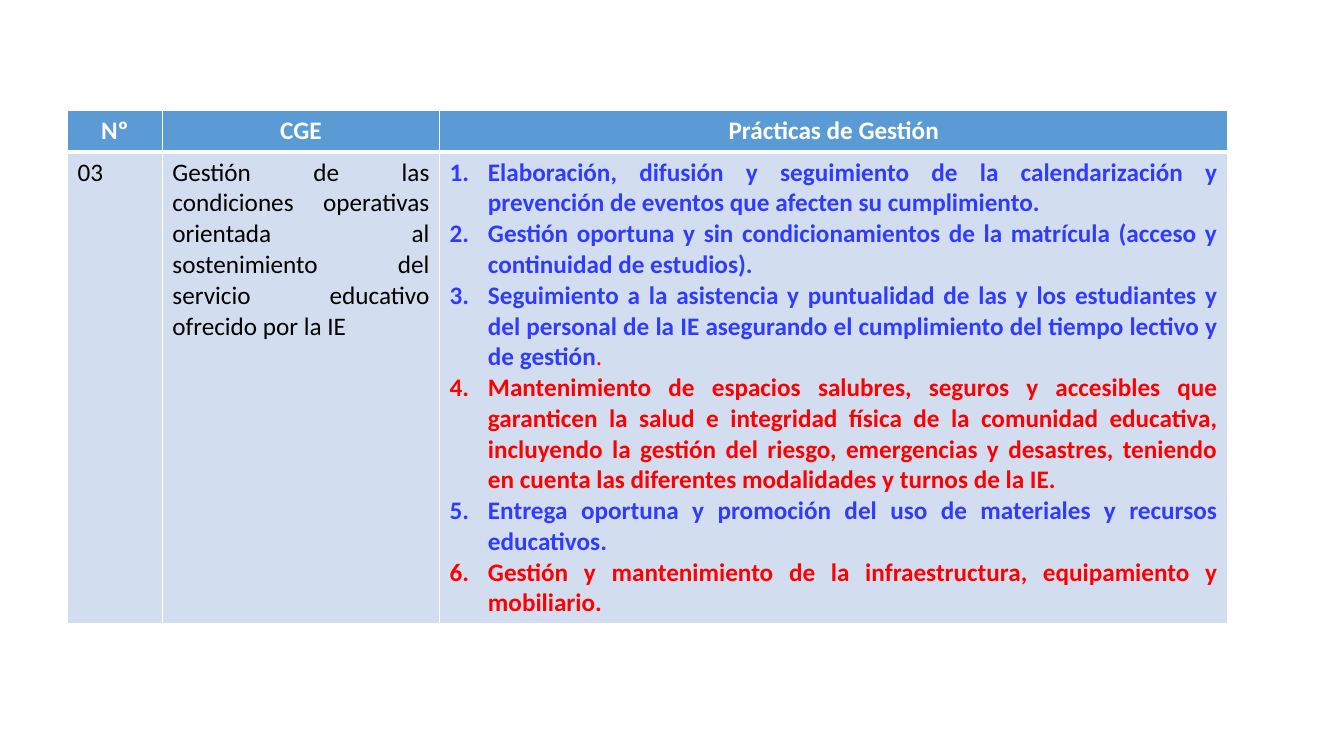
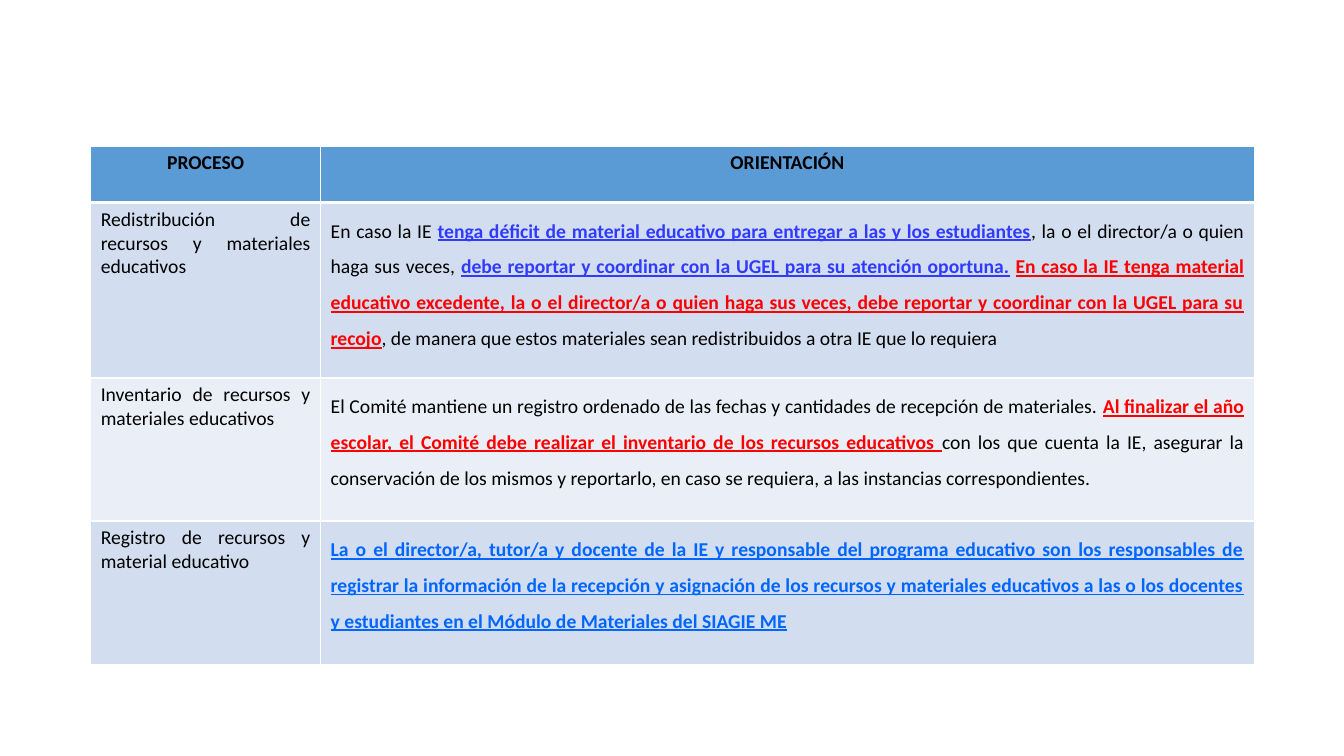
from dataclasses import dataclass

from lxml.etree import SubElement
from pptx import Presentation
from pptx.dml.color import RGBColor
from pptx.enum.text import PP_ALIGN
from pptx.oxml.ns import qn
from pptx.util import Inches, Pt

FONT = "Calibri"
BLACK, WHITE, BLUE, RED, AZURE = "000000", "FFFFFF", "313BFF", "FF0000", "0066FF"
HEAD, BANDS = "5B9BD5", ("D2DEEF", "EAEFF7")
CENTER, LEFT, JUST = PP_ALIGN.CENTER, PP_ALIGN.LEFT, PP_ALIGN.JUSTIFY


@dataclass(frozen=True)
class Run:
    text: str
    color: str = BLACK
    bold: bool = False
    under: bool = False


@dataclass(frozen=True)
class Para:
    runs: tuple[Run, ...]
    align: PP_ALIGN = JUST
    space: float = 1.0
    number: bool = False


@dataclass(frozen=True)
class Grid:
    left: float
    top: float
    cols: tuple[float, ...]
    rows: tuple[float, ...]
    size: int
    cells: tuple[tuple[tuple[Para, ...], ...], ...]


def paint(color: str) -> RGBColor:
    return RGBColor.from_string(color)


def border(cell, side: str, width: float) -> None:
    line = SubElement(cell._tc.get_or_add_tcPr(), qn(f"a:{side}"), w=str(Pt(width)))
    fill = SubElement(line, qn("a:solidFill"))
    SubElement(fill, qn("a:srgbClr"), val=WHITE)


def write(par, data: Para, size: int) -> None:
    if data.number:
        props = par._p.get_or_add_pPr()
        props.set("marL", str(Inches(0.38)))
        props.set("indent", str(Inches(-0.38)))
        SubElement(props, qn("a:buFont"), typeface="+mj-lt")
        SubElement(props, qn("a:buAutoNum"), type="arabicPeriod")
    par.alignment = data.align
    par.line_spacing = data.space
    for item in data.runs:
        run = par.add_run()
        run.text = item.text
        font = run.font
        font.name, font.size = FONT, Pt(size)
        font.bold, font.underline = item.bold, item.under
        font.color.rgb = paint(item.color)


def style(cell, row: int) -> None:
    for side in ("lnL", "lnR"):
        border(cell, side, 1)
    border(cell, "lnT", 3 if row == 1 else 1)
    border(cell, "lnB", 3 if row == 0 else 1)
    cell.fill.solid()
    cell.fill.fore_color.rgb = paint(BANDS[(row - 1) % 2] if row else HEAD)


def draw(deck, grid: Grid) -> None:
    slide = deck.slides.add_slide(deck.slide_layouts[6])
    table = slide.shapes.add_table(
        len(grid.rows), len(grid.cols), Inches(grid.left), Inches(grid.top),
        Inches(sum(grid.cols)), Inches(sum(grid.rows)),
    ).table
    for col, width in zip(table.columns, grid.cols):
        col.width = Inches(width)
    for row, height in zip(table.rows, grid.rows):
        row.height = Inches(height)
    for r, line in enumerate(grid.cells):
        for c, paras in enumerate(line):
            cell = table.cell(r, c)
            style(cell, r)
            frame = cell.text_frame
            for n, para in enumerate(paras):
                write(frame.add_paragraph() if n else frame.paragraphs[0], para, grid.size)


def head(color: str, *names: str) -> tuple[tuple[Para, ...], ...]:
    return tuple((Para((Run(name, color, True),), CENTER),) for name in names)


def plain(text: str, align: PP_ALIGN = JUST) -> tuple[Para, ...]:
    return (Para((Run(text),), align),)


def task(text: str, color: str, *rest: Run) -> Para:
    return Para((Run(text, color, True), *rest), number=True)


def guide(*runs: Run) -> tuple[Para, ...]:
    return (Para(runs, space=1.5),)


def key(text: str, color: str) -> Run:
    return Run(text, color, True, True)


TASKS = (
    task("Elaboración, difusión y seguimiento de la calendarización y prevención de "
         "eventos que afecten su cumplimiento.", BLUE),
    task("Gestión oportuna y sin condicionamientos de la matrícula (acceso y "
         "continuidad de estudios).", BLUE),
    task("Seguimiento a la asistencia y puntualidad de las y los estudiantes y del "
         "personal de la IE asegurando el cumplimiento del tiempo lectivo y de gestión",
         BLUE, Run(".", RED)),
    task("Mantenimiento de espacios salubres, seguros y accesibles que garanticen la "
         "salud e integridad física de la comunidad educativa, incluyendo la gestión "
         "del riesgo, emergencias y desastres, teniendo en cuenta las diferentes "
         "modalidades y turnos de la IE.", RED),
    task("Entrega oportuna y promoción del uso de materiales y recursos educativos.", BLUE),
    task("Gestión y mantenimiento de la infraestructura, equipamiento y mobiliario.", RED),
)

DUTIES = Grid(0.67, 1.1, (0.94, 2.75, 7.82), (0.41, 4.66), 18, (
    head(WHITE, "Nº", "CGE", "Prácticas de Gestión"),
    (
        plain("03", LEFT),
        plain("Gestión de las condiciones operativas orientada al sostenimiento del "
              "servicio educativo ofrecido por la IE"),
        TASKS,
    ),
))

STEPS = Grid(0.9, 1.45, (2.28, 9.26), (0.56, 1.74, 1.42, 1.42), 14, (
    head(BLACK, "PROCESO", "ORIENTACIÓN"),
    (
        plain("Redistribución de recursos y materiales educativos"),
        guide(
            Run("En caso la IE "),
            key("tenga déficit de material educativo para entregar a las y los "
                "estudiantes", BLUE),
            Run(", la o el director/a o quien haga sus veces, "),
            key("debe reportar y coordinar con la UGEL para su atención oportuna.", BLUE),
            Run(" "),
            key("En caso la IE tenga material educativo excedente, la o el director/a o "
                "quien haga sus veces, debe reportar y coordinar con la UGEL para su "
                "recojo", RED),
            Run(", de manera que estos materiales sean redistribuidos a otra IE que lo "
                "requiera"),
        ),
    ),
    (
        plain("Inventario de recursos y materiales educativos"),
        guide(
            Run("El Comité mantiene un registro ordenado de las fechas y cantidades de "
                "recepción de materiales. "),
            key("Al finalizar el año escolar, el Comité debe realizar el inventario de "
                "los recursos educativos ", RED),
            Run("con los que cuenta la IE, asegurar la conservación de los mismos y "
                "reportarlo, en caso se requiera, a las instancias correspondientes."),
        ),
    ),
    (
        plain("Registro de recursos y material educativo"),
        guide(
            key("La o el director/a, tutor/a y docente de la IE y responsable del "
                "programa educativo son los responsables de registrar la información de "
                "la recepción y asignación de los recursos y materiales educativos a las "
                "o los docentes y estudiantes en el Módulo de Materiales del SIAGIE ME",
                AZURE),
        ),
    ),
))


def main() -> None:
    deck = Presentation()
    deck.slide_width, deck.slide_height = Inches(13.33), Inches(7.5)
    for grid in (DUTIES, STEPS):
        draw(deck, grid)
    deck.save("out.pptx")


if __name__ == "__main__":
    main()
